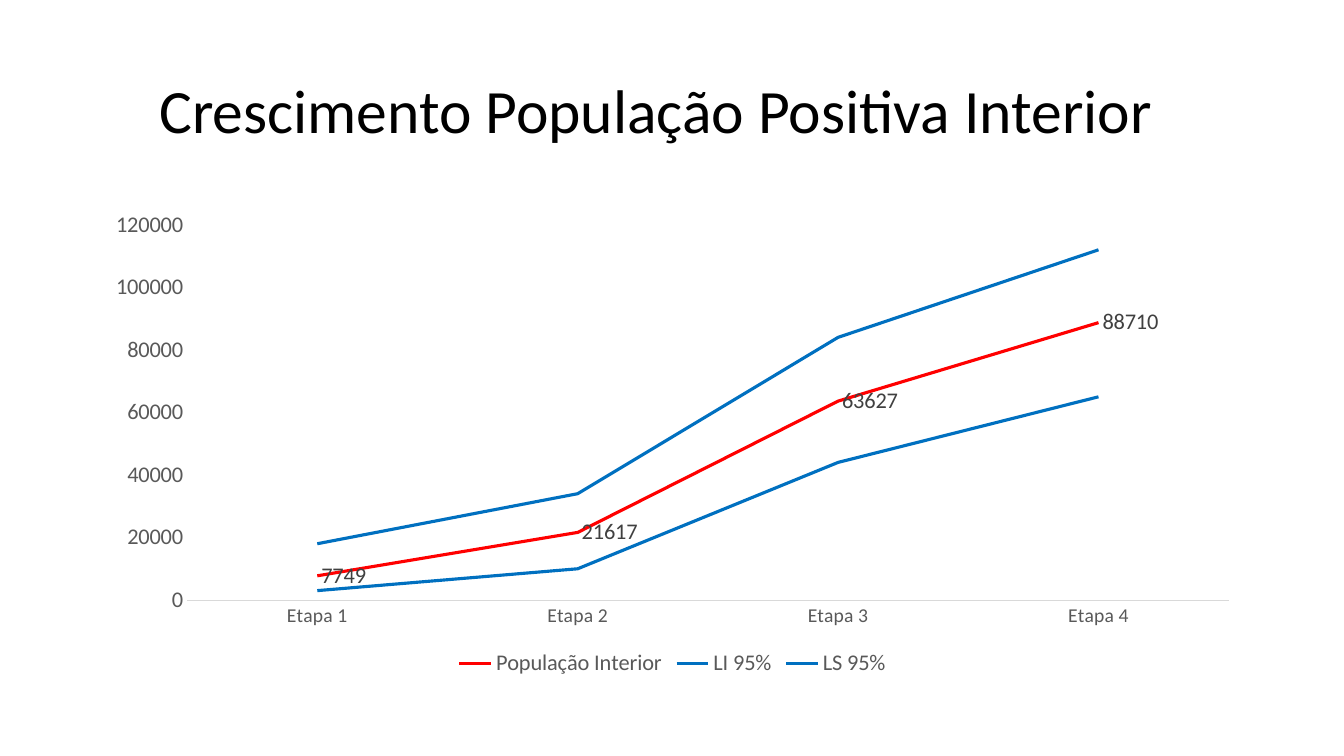
from dataclasses import dataclass

from pptx import Presentation
from pptx.chart.data import CategoryChartData
from pptx.dml.color import RGBColor
from pptx.enum.chart import (XL_CHART_TYPE, XL_LABEL_POSITION,
                             XL_LEGEND_POSITION, XL_MARKER_STYLE, XL_TICK_MARK)
from pptx.enum.text import MSO_ANCHOR, PP_ALIGN
from pptx.util import Cm, Pt

LINE = XL_CHART_TYPE.LINE
RIGHT = XL_LABEL_POSITION.RIGHT
BOTTOM = XL_LEGEND_POSITION.BOTTOM
NO_MARKER = XL_MARKER_STYLE.NONE
NO_TICK = XL_TICK_MARK.NONE
MIDDLE = MSO_ANCHOR.MIDDLE
CENTER = PP_ALIGN.CENTER


@dataclass(frozen=True)
class Theme:
    font: str = "Calibri"
    black: str = "000000"
    axis_text: str = "595959"
    label_text: str = "404040"
    axis_line: str = "D9D9D9"
    estimate: str = "FF0000"
    limit: str = "0070C0"
    title_size: float = 44
    chart_size: float = 10
    category_size: float = 14
    value_size: float = 16
    series_width: float = 2.25
    axis_width: float = 0.75


@dataclass(frozen=True)
class Box:
    left: float
    top: float
    width: float
    height: float

    def cm(self) -> tuple:
        return Cm(self.left), Cm(self.top), Cm(self.width), Cm(self.height)


@dataclass(frozen=True)
class Series:
    name: str
    values: tuple
    color: str
    labelled: bool = False


THEME = Theme()
TITLE_BOX = Box(1.5, 1.02, 30.07, 3.68)
CHART_BOX = Box(2.34, 5.08, 29.21, 12.09)
STAGES = [f"Etapa {n}" for n in range(1, 5)]
SERIES = (
    Series("População Interior", (7749, 21617, 63627, 88710), THEME.estimate, True),
    Series("LI 95%", (3000, 10000, 44000, 65000), THEME.limit),
    Series("LS 95%", (18000, 34000, 84000, 112000), THEME.limit),
)


def set_font(font, size: float, color: str) -> None:
    font.name = THEME.font
    font.size = Pt(size)
    font.bold = False
    font.color.rgb = RGBColor.from_string(color)


def set_line(line, color: str, width: float) -> None:
    line.color.rgb = RGBColor.from_string(color)
    line.width = Pt(width)


def add_text(s, text: str, *, box: Box, size: float, color: str,
             align=CENTER, anchor=MIDDLE, spacing: float = 0.9) -> None:
    tf = s.shapes.add_textbox(*box.cm()).text_frame
    tf.word_wrap = True
    tf.vertical_anchor = anchor
    p = tf.paragraphs[0]
    p.alignment = align
    p.line_spacing = spacing
    r = p.add_run()
    r.text = text
    set_font(r.font, size, color)


def format_axes(chart) -> None:
    for axis, size in ((chart.category_axis, THEME.category_size),
                       (chart.value_axis, THEME.value_size)):
        axis.has_major_gridlines = False
        axis.major_tick_mark = axis.minor_tick_mark = NO_TICK
        set_font(axis.tick_labels.font, size, THEME.axis_text)
    set_line(chart.category_axis.format.line, THEME.axis_line, THEME.axis_width)

    values = chart.value_axis
    values.minimum_scale, values.maximum_scale = 0, 120000
    values.major_unit = 20000
    values.tick_labels.number_format = "0"
    values.tick_labels.number_format_is_linked = False
    values.format.line.fill.background()


def format_series(line, series: Series) -> None:
    line.smooth = False
    line.marker.style = NO_MARKER
    set_line(line.format.line, series.color, THEME.series_width)
    if series.labelled:
        labels = line.data_labels
        labels.show_value = True
        labels.position = RIGHT
        labels.number_format = "0"
        labels.number_format_is_linked = False
        set_font(labels.font, THEME.value_size, THEME.label_text)


def add_growth_chart(s, box: Box) -> None:
    data = CategoryChartData(number_format="0")
    data.categories = STAGES
    for series in SERIES:
        data.add_series(series.name, series.values)
    chart = s.shapes.add_chart(LINE, *box.cm(), data).chart
    set_font(chart.font, THEME.chart_size, THEME.black)
    chart.has_title = False
    chart.plots[0].vary_by_categories = False

    format_axes(chart)
    for line, series in zip(chart.plots[0].series, SERIES):
        format_series(line, series)

    chart.has_legend = True
    chart.legend.position = BOTTOM
    chart.legend.include_in_layout = False
    set_font(chart.legend.font, THEME.value_size, THEME.axis_text)


def main() -> None:
    prs = Presentation()
    prs.slide_width, prs.slide_height = Cm(33.87), Cm(19.05)
    s = prs.slides.add_slide(prs.slide_layouts[6])

    # Title
    add_text(s, "Crescimento População Positiva Interior", box=TITLE_BOX,
             size=THEME.title_size, color=THEME.black)

    # Estimated population with its 95% limits
    add_growth_chart(s, CHART_BOX)

    prs.save("out.pptx")


if __name__ == "__main__":
    main()
